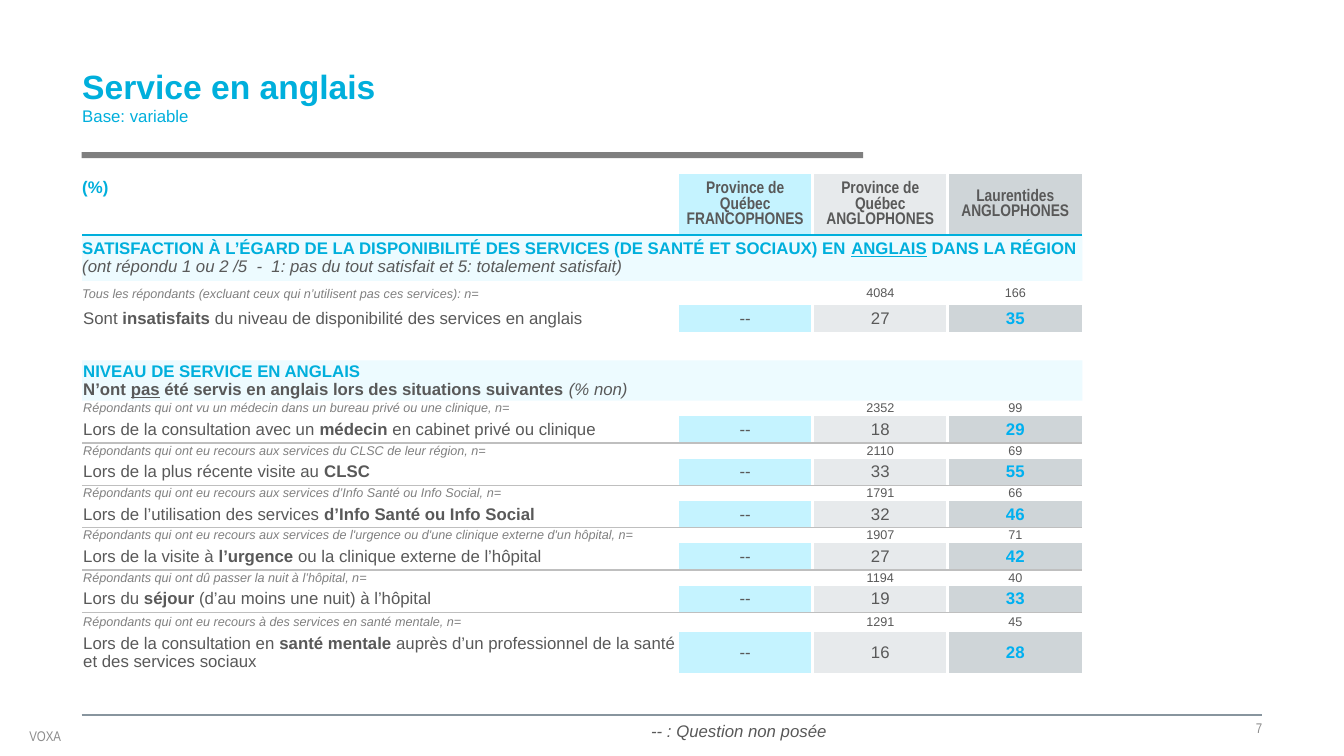
"""Builds the slide on health services received in English."""
from dataclasses import dataclass, field
from typing import Any

from lxml import etree
from pptx import Presentation, util as u
from pptx.dml import color as dml
from pptx.enum import shapes, text
from pptx.oxml import ns


@dataclass(frozen=True)
class Theme:
    """Colours, type sizes and fonts of the slide."""
    blue: str = "00AFDC"
    bright: str = "00B0F0"
    ink: str = "595959"
    note: str = "808080"
    foot: str = "8C8C8C"
    bar: str = "7F7F7F"
    base: str = "88959E"
    rule: str = "BFBFBF"
    white: str = "FFFFFF"
    tints: tuple[str, ...] = ("FFFFFF", "C5F3FF", "E7EAEC", "CFD5D8")
    big: int = 24
    main: int = 12
    small: int = 10
    tiny: int = 9
    sans: str = "Arial"
    slim: str = "Arial Narrow"


@dataclass(frozen=True)
class Box:
    """A place on the slide, in hundredths of its width and height."""
    left: float
    top: float
    width: float
    height: float

    def spots(self) -> tuple[int, int, int, int]:
        """Gives left, top, width and height as lengths."""
        return (across(self.left), down(self.top), across(self.width), down(self.height))


@dataclass(frozen=True)
class Run:
    """A stretch of text with its font values."""
    text: str
    look: dict[str, Any] = field(default_factory=dict)


@dataclass(frozen=True)
class Topic:
    """A question with its sample sizes and scores."""
    base: str
    sizes: tuple[str, str]
    label: str
    scores: tuple[str, str]


Lines = list[list[Run]]
T = Theme()
WIDE, HIGH = u.Inches(13.33), u.Inches(7.5)
COLS = (44.27, 10.05, 10.05, 10.05)
TIGHT = (0.01, 0, 0, 0)
ROOMY = (0, 0.05, 0, 0.02)
BOLD, SLANT, LINED = {"bold": True}, {"italic": True}, {"underline": True}
TEXT = {"size": u.Pt(T.main), "name": T.sans, "rgb": T.ink}
BLUE = TEXT | BOLD | {"rgb": T.blue}
NOTE = TEXT | SLANT | {"size": u.Pt(T.tiny), "rgb": T.note}
COUNT = TEXT | {"size": u.Pt(T.tiny)}
HEAD = TEXT | BOLD | {"name": T.slim}
FOOT = {"size": u.Pt(T.small), "name": T.slim, "rgb": T.foot}

HEADS = ("Province de\nQuébec\nFRANCOPHONES", "Province de\nQuébec\nANGLOPHONES",
         "Laurentides\nANGLOPHONES")
NEED: Lines = [
    [Run("SATISFACTION À L’ÉGARD DE LA DISPONIBILITÉ DES SERVICES (DE SANTÉ ET SOCIAUX) EN ", BLUE),
     Run("ANGLAIS", BLUE | LINED), Run(" DANS LA RÉGION", BLUE)],
    [Run("(ont répondu 1 ou 2 /5  -  1: pas du tout satisfait et 5: totalement satisfait)",
         TEXT | SLANT)]]
LEVEL: Lines = [
    [Run("NIVEAU DE SERVICE EN ANGLAIS", BLUE)],
    [Run("N’ont ", TEXT | BOLD), Run("pas", TEXT | BOLD | LINED),
     Run(" été servis en anglais lors des situations suivantes ", TEXT | BOLD),
     Run("(% non)", TEXT | SLANT)]]
FIRST = Topic("Tous les répondants (excluant ceux qui n’utilisent pas ces services): n=",
              ("4084", "166"),
              "Sont *insatisfaits* du niveau de disponibilité des services en anglais", ("27", "35"))
TOPICS = (
    Topic("Répondants qui ont vu un médecin dans un bureau privé ou une clinique, n=",
          ("2352", "99"),
          "Lors de la consultation avec un *médecin* en cabinet privé ou clinique", ("18", "29")),
    Topic("Répondants qui ont eu recours aux services du CLSC de leur région, n=",
          ("2110", "69"), "Lors de la plus récente visite au *CLSC*", ("33", "55")),
    Topic("Répondants qui ont eu recours aux services d’Info Santé ou Info Social, n=",
          ("1791", "66"), "Lors de l’utilisation des services *d’Info Santé ou Info Social*",
          ("32", "46")),
    Topic("Répondants qui ont eu recours aux services de l'urgence ou d'une clinique externe "
          "d'un hôpital, n=", ("1907", "71"),
          "Lors de la visite à *l’urgence* ou la clinique externe de l’hôpital", ("27", "42")),
    Topic("Répondants qui ont dû passer la nuit à l’hôpital, n=", ("1194", "40"),
          "Lors du *séjour* (d’au moins une nuit) à l’hôpital", ("19", "33")),
    Topic("Répondants qui ont eu recours à des services en santé mentale, n=", ("1291", "45"),
          "Lors de la consultation en *santé mentale* auprès d’un professionnel de la santé "
          "et des services sociaux", ("16", "28")))
ROWS = (7.07, 6.07, 3.2, 3.6, 3.73, 5.13) + (2.07, 3.53) * 5 + (2.67, 5.13)


def across(part: float) -> int:
    """Turns hundredths of the width into a length."""
    return round(WIDE * part / 100)


def down(part: float) -> int:
    """Turns hundredths of the height into a length."""
    return round(HIGH * part / 100)


def put(thing: Any, vals: dict[str, Any]) -> None:
    """Sets each value on a font, frame, cell or paragraph."""
    for key, val in vals.items():
        if key == "rgb":
            thing.color.rgb = dml.RGBColor.from_string(val)
        else:
            setattr(thing, key, val)


def write(frame: Any, lines: Lines, look: dict[str, Any]) -> None:
    """Writes lines of runs, each line with the same paragraph values."""
    for at, line in enumerate(lines):
        para = frame.add_paragraph() if at else frame.paragraphs[0]
        put(para, look)
        for part in line:
            run = para.add_run()
            run.text = part.text
            put(run.font, part.look)
        if not line:
            etree.SubElement(para._p, ns.qn("a:endParaRPr"), sz=str(T.tiny * 100))


def pads(inset: tuple[float, ...]) -> dict[str, Any]:
    """Names the four margins of a frame or cell."""
    return {"margin_" + side: u.Inches(gap)
            for side, gap in zip(("left", "top", "right", "bottom"), inset)}


def edge(cell: Any, side: str, hue: str | None, width: float) -> None:
    """Draws or clears one border of a cell."""
    line = etree.SubElement(cell._tc.get_or_add_tcPr(), ns.qn("a:ln" + side),
                            w=str(u.Pt(width)))
    fill = etree.SubElement(line, ns.qn("a:solidFill" if hue else "a:noFill"))
    if hue:
        etree.SubElement(fill, ns.qn("a:srgbClr"), val=hue)


def paint(cell: Any, hue: str | None, alpha: int = 100) -> None:
    """Fills a cell, or leaves it clear."""
    if not hue:
        cell.fill.background()
        return
    cell.fill.solid()
    cell.fill.fore_color.rgb = dml.RGBColor.from_string(hue)
    if alpha < 100:
        tone = cell._tc.tcPr.find(ns.qn("a:solidFill")).find(ns.qn("a:srgbClr"))
        etree.SubElement(tone, ns.qn("a:alpha"), val=str(alpha * 1000))


def label(words: str) -> list[Run]:
    """Splits a label into plain runs and starred bold ones."""
    return [Run(part, TEXT | {"bold": at % 2 == 1})
            for at, part in enumerate(words.split("*")) if part]


def cells(topic: Topic) -> list[list[Lines]]:
    """Gives the sample row and the score row of a topic."""
    tops = [[[Run(topic.base, NOTE)]], [[]]] + [[[Run(size, COUNT)]] for size in topic.sizes]
    mid, last = topic.scores
    return [tops, [[label(topic.label)], [[Run("--", TEXT)]], [[Run(mid, TEXT)]],
                   [[Run(last, TEXT | BOLD | {"rgb": T.bright})]]]]


def chart(slide: Any) -> None:
    """Draws the table of results."""
    blank: list[Lines] = [[[]]] * 4
    heads = [[[Run("(%)", BLUE)]]] + [[[Run(part, HEAD)] for part in head.split("\n")]
                                      for head in HEADS]
    grid = [heads, [NEED] + blank[1:], *cells(FIRST), blank, [LEVEL] + blank[1:]]
    grid += [row for topic in TOPICS for row in cells(topic)]
    bands, filled = (1, 5), {0, 3, *range(7, len(ROWS), 2)}
    ruled = range(7, len(ROWS) - 1, 2)
    place = Box(6.12, 23.07, sum(COLS), sum(ROWS))
    table = slide.shapes.add_table(len(ROWS), len(COLS), *place.spots()).table
    put(table, {"first_row": False, "horz_banding": False})
    for col, part in zip(table.columns, COLS):
        col.width = across(part)
    for row, part in zip(table.rows, ROWS):
        row.height = down(part)
    for band in bands:
        table.cell(band, 0).merge(table.cell(band, len(COLS) - 1))
    lines = {0: (T.blue, 2.25)} | {row: (T.rule, 1) for row in ruled}
    for y, row in enumerate(grid):
        for x, words in enumerate(row):
            cell = table.cell(y, x)
            roomy = x == 0 and y < 3
            put(cell, pads(ROOMY if roomy else TIGHT) | {
                "vertical_anchor": text.MSO_ANCHOR.TOP if roomy and y < 2
                else text.MSO_ANCHOR.MIDDLE})
            write(cell.text_frame, words, {
                "alignment": text.PP_ALIGN.CENTER if x else text.PP_ALIGN.LEFT,
                "line_spacing": 0.95 if roomy else 1.0})
            inner = y not in bands
            edge(cell, "L", T.white if x and inner else None, 2.25)
            edge(cell, "R", T.white if x < 3 and inner else None, 2.25)
            edge(cell, "T", *lines.get(y - 1, (None, 1)))
            edge(cell, "B", *lines.get(y, (None, 1)))
            if y in bands:
                paint(cell, T.tints[1] if x == 0 else None, 30)
            else:
                paint(cell, T.tints[x] if y in filled else None)


def note(slide: Any, place: Box, run: Run, look: dict[str, Any], frame: dict[str, Any]) -> None:
    """Adds a line of text in a box."""
    box = slide.shapes.add_textbox(*place.spots()).text_frame
    put(box, frame)
    write(box, [[run]], look)


def main() -> None:
    """Builds and saves the slide."""
    deck = Presentation()
    put(deck, {"slide_width": WIDE, "slide_height": HIGH})
    slide = deck.slides.add_slide(deck.slide_layouts[5])
    line = slide.shapes.add_connector(shapes.MSO_CONNECTOR.STRAIGHT, across(6.08), down(94.53),
                                      across(93.92), down(94.53))
    put(line.line, {"rgb": T.base, "width": u.Pt(1.5)})
    etree.SubElement(line._element.spPr, ns.qn("a:effectLst"))
    bar = slide.shapes.add_shape(shapes.MSO_SHAPE.RECTANGLE, *Box(6.08, 20.13, 58.14, 0.8).spots())
    bar.shadow.inherit = False
    bar.fill.solid()
    bar.fill.fore_color.rgb = dml.RGBColor.from_string(T.bar)
    bar.line.fill.background()
    flush = pads((0, 0, 0, 0)) | {"word_wrap": True, "vertical_anchor": text.MSO_ANCHOR.MIDDLE}
    title = slide.shapes.title
    put(title, dict(zip(("left", "top", "width", "height"),
                        Box(6.12, 5.33, 61.07, 14.67).spots())))
    put(title.text_frame, flush | {"auto_size": text.MSO_AUTO_SIZE.NONE})
    write(title.text_frame, [[Run("Service en anglais", BLUE | {"size": u.Pt(T.big)})],
                             [Run("Base: variable", BLUE | {"bold": False})]],
          {"alignment": text.PP_ALIGN.LEFT})
    note(slide, Box(2.18, 96, 3.08, 2.8), Run("VOXA", FOOT), {}, flush)
    note(slide, Box(65.49, 94.53, 28.43, 3.47), Run("7", FOOT),
         {"alignment": text.PP_ALIGN.RIGHT}, flush)
    chart(slide)
    note(slide, Box(47.71, 94.67, 14.7, 4), Run("-- : Question non posée", TEXT | SLANT), {},
         {"word_wrap": False, "auto_size": text.MSO_AUTO_SIZE.SHAPE_TO_FIT_TEXT})
    deck.save("out.pptx")


if __name__ == "__main__":
    main()
